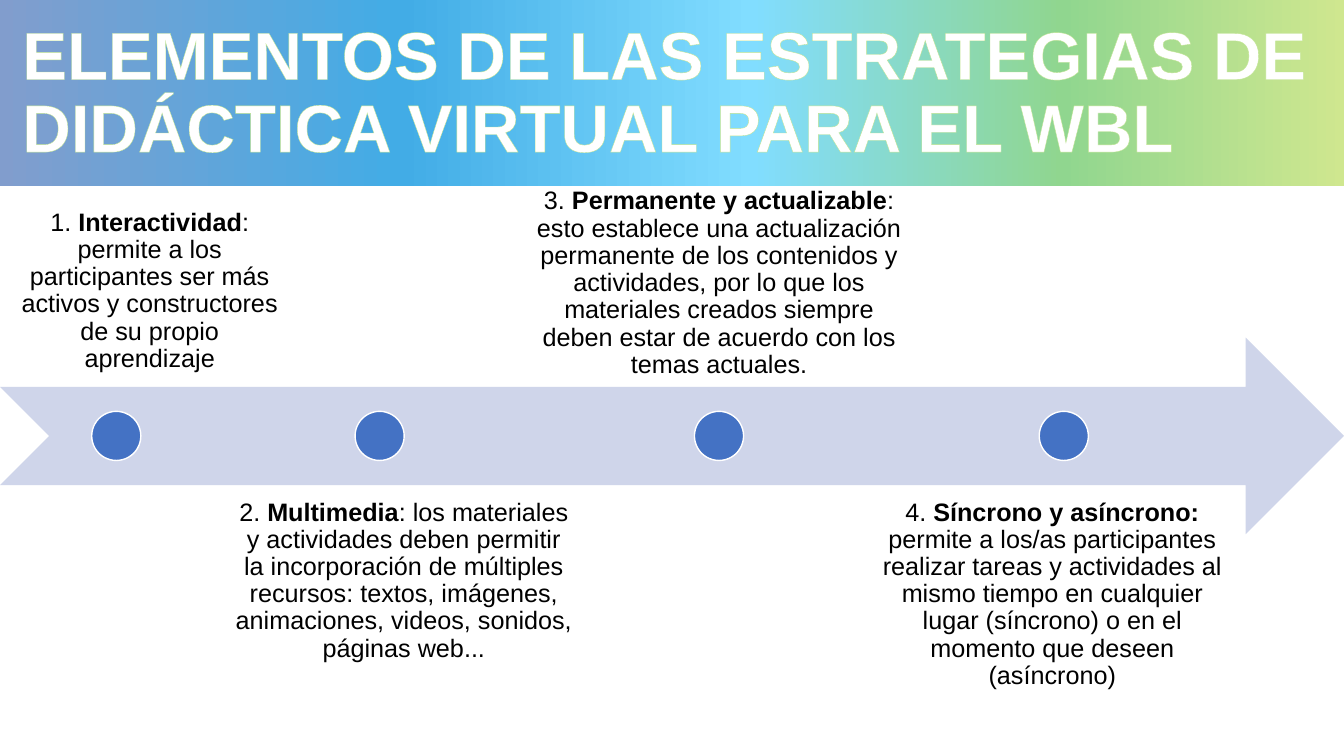
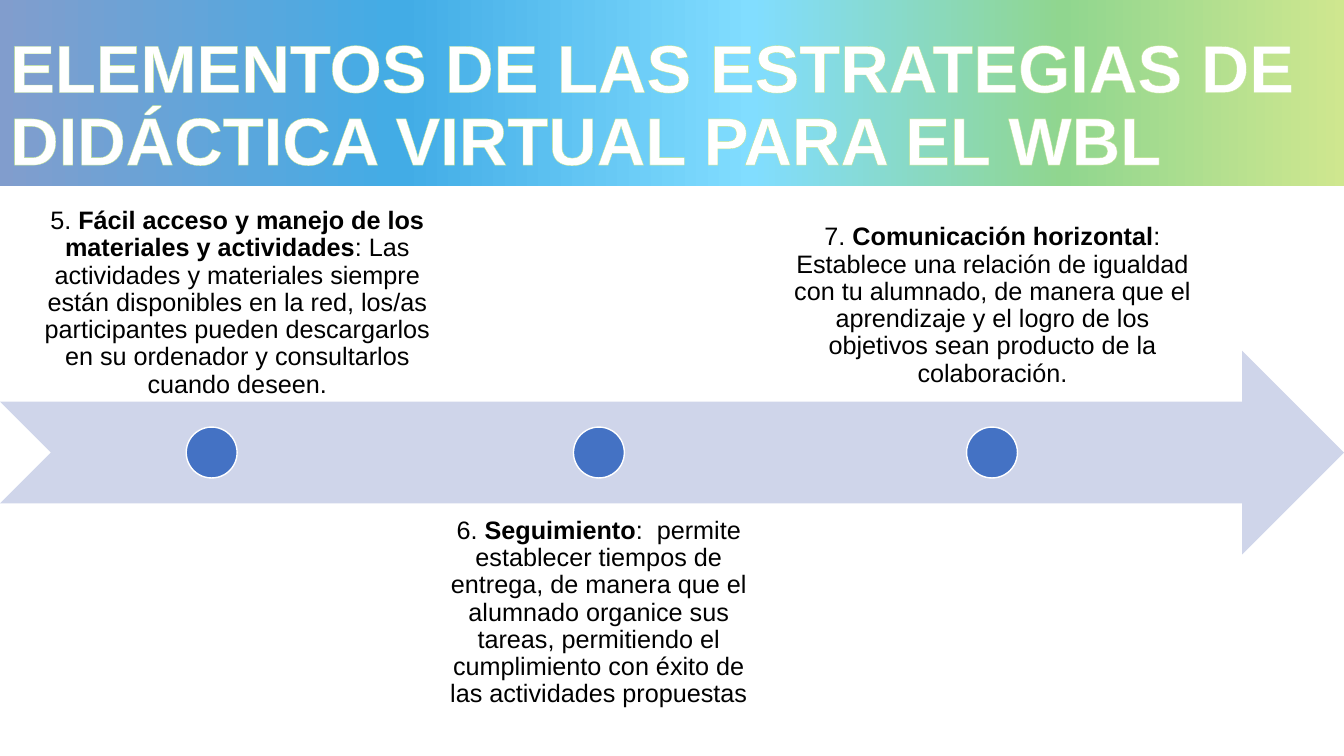
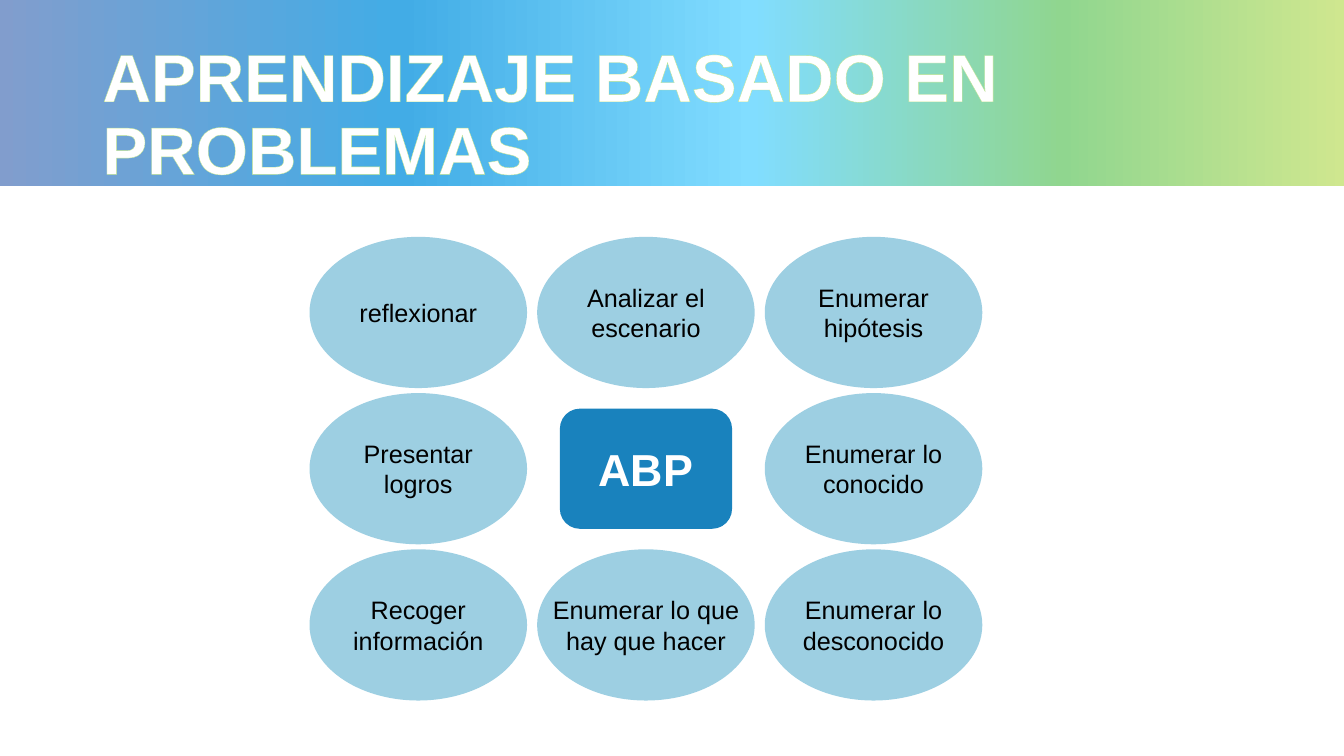
from dataclasses import dataclass

from lxml.etree import SubElement
from pptx import Presentation
from pptx.dml.color import RGBColor
from pptx.enum.shapes import MSO_SHAPE as Preset
from pptx.enum.text import MSO_ANCHOR as Anchor, MSO_AUTO_SIZE as AutoSize, PP_ALIGN as Align
from pptx.oxml.ns import qn
from pptx.shapes.autoshape import Shape
from pptx.shapes.shapetree import GroupShapes, SlideShapes
from pptx.slide import Slide, SlideLayout
from pptx.text.text import _Run as Run
from pptx.util import Emu, Inches, Pt

COLUMNS, ROWS = 32, 18
CELL = 381000


@dataclass(frozen=True)
class Theme:
    font: str = "Arial"
    title_size: int = 48
    hub_size: int = 32
    body_size: int = 18
    tight_lines: float = 0.9
    white: str = "FFFFFF"
    text: str = "000000"
    title_outline: str = "BFE38F"
    arrow: str = "CFD5EA"
    dot: str = "4472C4"
    oval: str = "9DCFE2"
    hub: str = "1982BD"
    band: tuple[tuple[int, str], ...] = (
        (0, "819DCD"), (30, "42ACE6"), (56, "81DDFF"), (79, "90D68F"), (100, "CFE78F"),
    )


THEME = Theme()
BAND_ROWS = 4.42
TITLE_ROWS = 4


@dataclass(frozen=True)
class Box:
    left: float
    top: float
    width: float
    height: float

    def emu(self) -> tuple[Emu, ...]:
        return tuple(Emu(round(cells * CELL)) for cells in (self.left, self.top, self.width, self.height))


def centred(x: float, y: float, width: float, height: float) -> Box:
    return Box(x - width / 2, y - height / 2, width, height)


@dataclass(frozen=True)
class Step:
    heading: str
    detail: str
    left: float
    width: float
    dot: float
    drop: float = 0
    insets: tuple[float, float, float, float] = (0.14, 0.14, 0.14, 0.14)


@dataclass(frozen=True)
class Timeline:
    title: Box
    top: float
    height: float
    first_number: int
    steps: tuple[Step, ...]


@dataclass(frozen=True)
class Stage:
    column: int
    row: int
    label: str
    width: float = 4.49


ELEMENTS_TITLE = "ELEMENTOS DE LAS ESTRATEGIAS DE DIDÁCTICA VIRTUAL PARA EL WBL"
TIMELINES = (
    Timeline(Box(0.29, 0.24, 31.44, TITLE_ROWS), 8.04, 4.68, 1, (
        Step("Interactividad",
             ": permite a los participantes ser más activos y constructores de su propio aprendizaje",
             0, 7.13, 2.77),
        Step("Multimedia",
             ": los materiales y actividades deben permitir la incorporación de múltiples recursos: "
             "textos, imágenes, animaciones, videos, sonidos, páginas web...",
             5.26, 8.71, 9.04),
        Step("Permanente y actualizable",
             ": esto establece una actualización permanente de los contenidos y actividades, por lo que "
             "los materiales creados siempre deben estar de acuerdo con los temas actuales.",
             12.55, 9.14, 17.12, insets=(0.08, 0.04, 0.08, 0.08)),
        Step("Síncrono y asíncrono: ",
             "permite a los/as participantes realizar tareas y actividades al mismo tiempo en cualquier "
             "lugar (síncrono) o en el momento que deseen (asíncrono)",
             20.59, 8.93, 25.33),
    )),
    Timeline(Box(0, 0.55, COLUMNS, TITLE_ROWS), 8.35, 4.85, 5, (
        Step("Fácil acceso y manejo de los materiales y actividades",
             ": Las actividades y materiales siempre están disponibles en la red, los/as participantes "
             "pueden descargarlos en su ordenador y consultarlos cuando deseen.",
             0.62, 10.06, 5.04, drop=0.26),
        Step("Seguimiento",
             ":  permite establecer tiempos de entrega, de manera que el alumnado organice sus tareas, "
             "permitiendo el cumplimiento con éxito de las actividades propuestas",
             10.32, 7.87, 14.26),
        Step("Comunicación horizontal",
             ": Establece una relación de igualdad con tu alumnado, de manera que el aprendizaje y el "
             "logro de los objetivos sean producto de la colaboración.",
             18.46, 10.34, 23.62),
    )),
)

CYCLE_TITLE = "APRENDIZAJE BASADO EN PROBLEMAS"
CYCLE_TITLE_BOX = Box(2.2, 0.77, 27.6, TITLE_ROWS)
STAGES = (
    Stage(1, 0, "Analizar el escenario"),
    Stage(2, 0, "Enumerar hipótesis"),
    Stage(2, 1, "Enumerar lo conocido"),
    Stage(2, 2, "Enumerar lo desconocido"),
    Stage(1, 2, "Enumerar lo que hay que hacer", 5.02),
    Stage(0, 2, "Recoger información"),
    Stage(0, 1, "Presentar logros"),
    Stage(0, 0, "reflexionar"),
)
HUB = Stage(1, 1, "ABP")
OVAL_SIZE = (5.18, 3.6)
HUB_SIZE = (4.1, 2.86)
FIRST_CENTRE = (9.96, 7.44)
PITCH = (5.42, 3.72)
LABEL_ROWS = 1.7


def format_run(run: Run, size: int, colour: str, bold: bool = False) -> None:
    run.font.name = THEME.font
    run.font.size = Pt(size)
    run.font.bold = bold
    run.font.color.rgb = RGBColor.from_string(colour)


def add_preset(shapes: SlideShapes | GroupShapes, preset: Preset, box: Box, fill: str,
               line: str | None = None) -> Shape:
    shape = shapes.add_shape(preset, *box.emu())
    shape.shadow.inherit = False
    shape.fill.solid()
    shape.fill.fore_color.rgb = RGBColor.from_string(fill)
    if line:
        shape.line.color.rgb = RGBColor.from_string(line)
        shape.line.width = Pt(1)
    else:
        shape.line.fill.background()
    return shape


def move_band_to_layout(slide: Slide, layout: SlideLayout) -> None:
    band = add_preset(slide.shapes, Preset.RECTANGLE, Box(0, 0, COLUMNS, BAND_ROWS), THEME.white)
    band.fill.gradient()
    band.fill.gradient_angle = 0
    stops = band.element.spPr.find(qn("a:gradFill")).find(qn("a:gsLst"))
    for stop in list(stops):
        stops.remove(stop)
    for percent, colour in THEME.band:
        stop = SubElement(stops, qn("a:gs"), pos=str(percent * 1000))
        SubElement(stop, qn("a:srgbClr"), val=colour)
    layout.shapes.element.insert(2, band.element)


def set_title(slide: Slide, text: str, box: Box) -> None:
    title = slide.shapes.title
    title.left, title.top, title.width, title.height = box.emu()
    frame = title.text_frame
    frame.text = text
    frame.word_wrap = True
    frame.auto_size = AutoSize.NONE
    frame.vertical_anchor = Anchor.MIDDLE
    paragraph = frame.paragraphs[0]
    paragraph.alignment = Align.LEFT
    paragraph.line_spacing = THEME.tight_lines
    run = paragraph.runs[0]
    format_run(run, THEME.title_size, THEME.white, bold=True)
    properties = run.font._element
    outline = SubElement(properties, qn("a:ln"), w=str(Pt(0.75)))
    SubElement(SubElement(outline, qn("a:solidFill")), qn("a:srgbClr"), val=THEME.title_outline)
    properties.insert(0, outline)


def add_step_text(slide: Slide, step: Step, number: int, box: Box, anchor: Anchor) -> None:
    frame = slide.shapes.add_textbox(*box.emu()).text_frame
    frame.word_wrap = True
    frame.vertical_anchor = anchor
    (frame.margin_left, frame.margin_top,
     frame.margin_right, frame.margin_bottom) = map(Inches, step.insets)
    paragraph = frame.paragraphs[0]
    paragraph.alignment = Align.CENTER
    paragraph.line_spacing = THEME.tight_lines
    for text, bold in ((f"{number}. ", False), (step.heading, True), (step.detail, False)):
        run = paragraph.add_run()
        run.text = text
        format_run(run, THEME.body_size, THEME.text, bold)


def draw_timeline(slide: Slide, timeline: Timeline) -> None:
    set_title(slide, ELEMENTS_TITLE, timeline.title)
    height = timeline.height
    middle = timeline.top + height / 2
    add_preset(slide.shapes, Preset.NOTCHED_RIGHT_ARROW,
               Box(0, timeline.top, COLUMNS, height), THEME.arrow)
    for number, step in enumerate(timeline.steps, timeline.first_number):
        above = number % 2 == 1
        top = timeline.top + (-0.75 if above else 0.75) * height + step.drop
        add_step_text(slide, step, number, Box(step.left, top, step.width, height),
                      Anchor.BOTTOM if above else Anchor.TOP)
        add_preset(slide.shapes, Preset.OVAL, centred(step.dot, middle, height / 4, height / 4),
                   THEME.dot, THEME.white)


def draw_stage(slide: Slide, stage: Stage, preset: Preset, size: tuple[float, float], fill: str,
               text_size: int, colour: str, bold: bool = False) -> None:
    x = FIRST_CENTRE[0] + stage.column * PITCH[0]
    y = FIRST_CENTRE[1] + stage.row * PITCH[1]
    shapes = slide.shapes.add_group_shape().shapes
    add_preset(shapes, preset, centred(x, y, *size), fill)
    frame = shapes.add_textbox(*centred(x, y, stage.width, LABEL_ROWS).emu()).text_frame
    frame.text = stage.label
    frame.word_wrap = True
    frame.vertical_anchor = Anchor.MIDDLE
    paragraph = frame.paragraphs[0]
    paragraph.alignment = Align.CENTER
    format_run(paragraph.runs[0], text_size, colour, bold)


def draw_cycle(slide: Slide) -> None:
    set_title(slide, CYCLE_TITLE, CYCLE_TITLE_BOX)
    draw_stage(slide, HUB, Preset.ROUNDED_RECTANGLE, HUB_SIZE, THEME.hub,
               THEME.hub_size, THEME.white, bold=True)
    for stage in STAGES:
        draw_stage(slide, stage, Preset.OVAL, OVAL_SIZE, THEME.oval, THEME.body_size, THEME.text)


def main() -> None:
    presentation = Presentation()
    presentation.slide_width = Emu(COLUMNS * CELL)
    presentation.slide_height = Emu(ROWS * CELL)
    layout = presentation.slide_layouts.get_by_name("Title Only")
    slides = [presentation.slides.add_slide(layout) for _ in range(len(TIMELINES) + 1)]
    move_band_to_layout(slides[0], layout)
    for slide, timeline in zip(slides, TIMELINES):
        draw_timeline(slide, timeline)
    draw_cycle(slides[-1])
    presentation.save("out.pptx")


if __name__ == "__main__":
    main()
